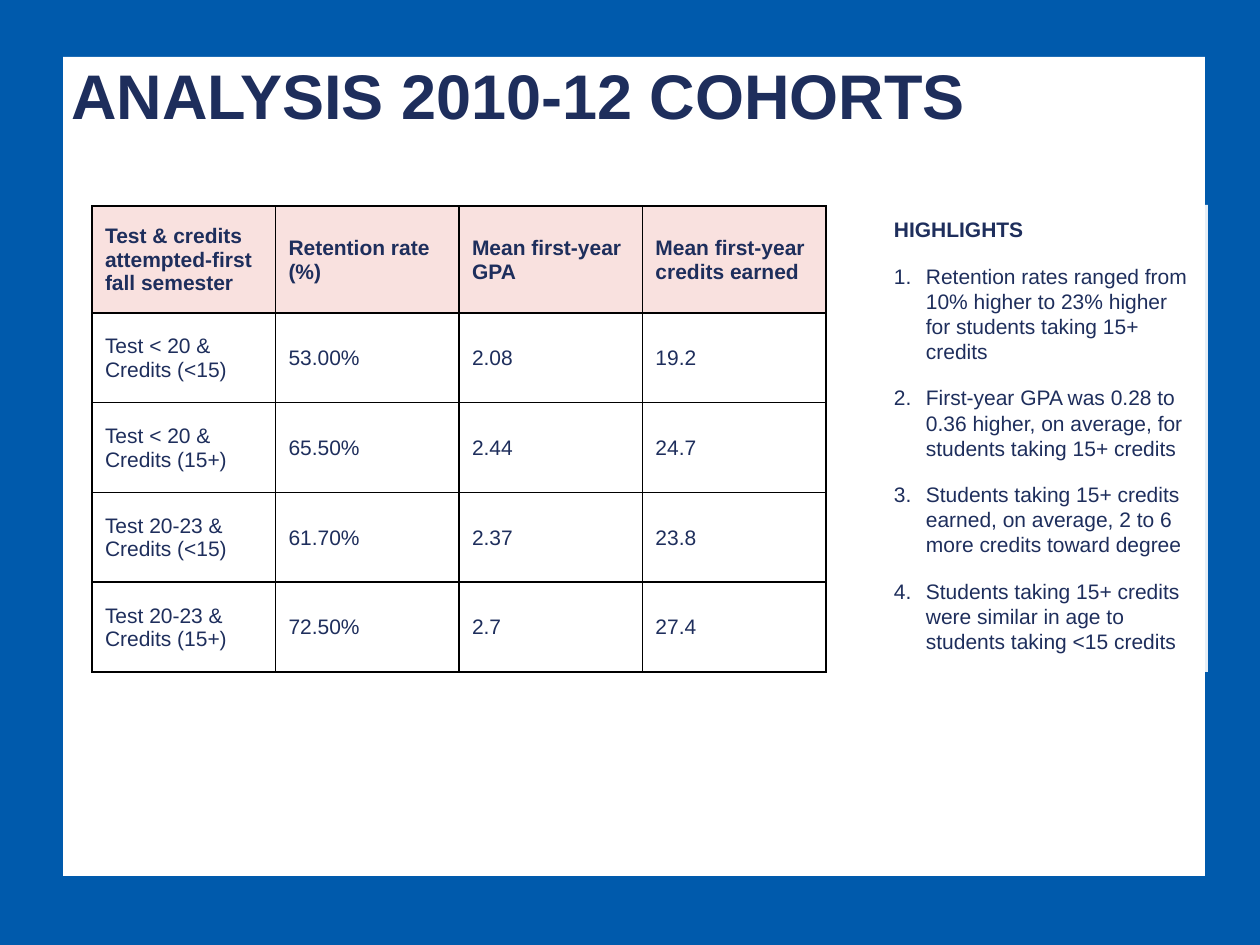
from lxml.etree import SubElement
from pptx import Presentation
from pptx.dml.color import RGBColor
from pptx.enum.shapes import MSO_SHAPE as Preset
from pptx.enum.text import MSO_ANCHOR as Anchor, PP_ALIGN as Align
from pptx.oxml.ns import qn
from pptx.util import Pt

SCALE = 914400 / 126
COLOURS = {"page": "005AAC", "white": "FFFFFF", "text": "1E2E5C", "header": "F6CCCA", "border": "000000"}
HEADERS = ["Test & credits attempted-first fall semester", "Retention rate (%)",
           "Mean first-year GPA", "Mean first-year credits earned"]
ROWS = [
    ["Test < 20 &\nCredits (<15)", "53.00%", "2.08", "19.2"],
    ["Test < 20 &\nCredits (15+)", "65.50%", "2.44", "24.7"],
    ["Test 20-23 &\nCredits (<15)", "61.70%", "2.37", "23.8"],
    ["Test 20-23 &\nCredits (15+)", "72.50%", "2.7", "27.4"],
]
HIGHLIGHTS = [
    "Retention rates ranged from 10% higher to 23% higher for students taking 15+ credits",
    "First-year GPA was 0.28 to 0.36 higher, on average, for students taking 15+ credits",
    "Students taking 15+ credits earned, on average, 2 to 6 more credits toward degree",
    "Students taking 15+ credits were similar in age to students taking <15 credits",
]


def px(length):
    """Turn px into EMU."""
    return round(length * SCALE)


def colour(name):
    """Look up a named colour."""
    return RGBColor.from_string(COLOURS[name])


def paint(fill, name, alpha=100):
    """Fill with a named colour at a given opacity in percent."""
    fill.solid()
    fill.fore_color.rgb = colour(name)
    if alpha < 100:
        tint = fill._xPr.find(qn("a:solidFill"))[0]
        SubElement(tint, qn("a:alpha"), val=str(alpha * 1000))


def write(para, text, size=12, bold=False, after=0, numbered=False):
    """Write one formatted paragraph."""
    para.alignment = Align.LEFT
    para.space_after = Pt(after)
    if numbered:
        props = para._p.get_or_add_pPr()
        props.set("marL", str(px(32)))
        props.set("indent", str(px(-32)))
        SubElement(props, qn("a:buFont"), typeface="+mj-lt")
        SubElement(props, qn("a:buAutoNum"), type="arabicPeriod")
    span = para.add_run()
    span.text = text
    span.font.name = "Arial"
    span.font.size = Pt(size)
    span.font.bold = bold
    span.font.color.rgb = colour("text")


def add_panel(page, box, alpha=100):
    """Add a white rectangle without a line."""
    panel = page.shapes.add_shape(Preset.RECTANGLE, *map(px, box))
    panel.shadow.inherit = False
    panel.line.fill.background()
    paint(panel.fill, "white", alpha)
    return panel


def add_title(page, box, text):
    """Add the heading."""
    frame = page.shapes.add_textbox(*map(px, box)).text_frame
    frame.word_wrap = True
    write(frame.paragraphs[0], text, size=36, bold=True)


def add_highlights(page, box):
    """Add the numbered highlights panel."""
    frame = add_panel(page, box, alpha=90).text_frame
    frame.word_wrap = True
    frame.vertical_anchor = Anchor.TOP
    frame.margin_left = frame.margin_right = frame.margin_top = frame.margin_bottom = px(12)
    write(frame.paragraphs[0], "HIGHLIGHTS", bold=True, after=12)
    for text in HIGHLIGHTS:
        write(frame.add_paragraph(), text, after=12, numbered=True)


def add_borders(cell):
    """Draw a thin line on all four sides of a cell."""
    props = cell._tc.get_or_add_tcPr()
    for index, side in enumerate(("lnL", "lnR", "lnT", "lnB")):
        line = props.makeelement(qn(f"a:{side}"), {"w": str(Pt(1))})
        SubElement(SubElement(line, qn("a:solidFill")), qn("a:srgbClr"), val=COLOURS["border"])
        props.insert(index, line)


def add_cohort_table(page, box, header_height):
    """Add the table of cohorts with equal columns and equal body rows."""
    lines = [HEADERS, *ROWS]
    table = page.shapes.add_table(len(lines), len(HEADERS), *map(px, box)).table
    for column in table.columns:
        column.width = px(box[2] / len(HEADERS))
    for row in table.rows:
        row.height = px((box[3] - header_height) / len(ROWS))
    table.rows[0].height = px(header_height)
    for r, line in enumerate(lines):
        for c, text in enumerate(line):
            cell = table.cell(r, c)
            cell.vertical_anchor = Anchor.MIDDLE
            cell.margin_left = cell.margin_right = px(13)
            cell.margin_top, cell.margin_bottom = px(7), px(6)
            paint(cell.fill, "white" if r else "header", alpha=59)
            add_borders(cell)
            for n, part in enumerate(text.split("\n")):
                para = cell.text_frame.add_paragraph() if n else cell.text_frame.paragraphs[0]
                write(para, part, bold=r == 0)


def main():
    """Build the slide."""
    deck = Presentation()
    deck.slide_width, deck.slide_height = px(1260), px(945)
    page = deck.slides.add_slide(deck.slide_layouts[6])
    paint(page.background.fill, "page")
    add_panel(page, (63, 57, 1142, 819))
    add_title(page, (59, 50, 1032, 89), "ANALYSIS 2010-12 COHORTS")
    add_highlights(page, (882, 205, 326, 467))
    add_cohort_table(page, (92, 206, 734, 466), header_height=107)
    deck.save("out.pptx")


if __name__ == "__main__":
    main()
